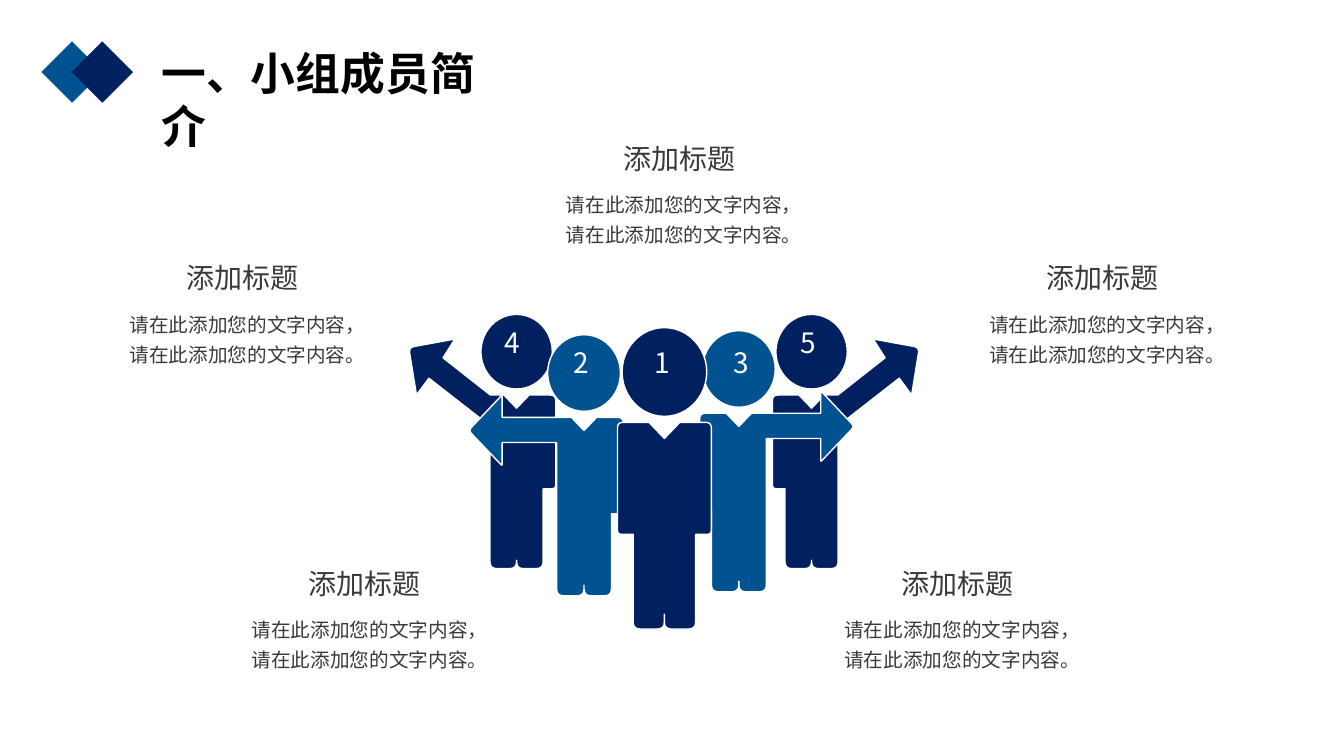
"""Build a team introduction slide with five numbered figures and captions."""
from dataclasses import dataclass

from lxml import etree
from pptx import Presentation
from pptx import util as u
from pptx.dml.color import RGBColor
from pptx.enum import shapes, text
from pptx.oxml.ns import qn


@dataclass(frozen=True)
class Theme:
    navy: str = "002060"
    blue: str = "005390"
    white: str = "FFFFFF"
    black: str = "000000"
    grey: str = "3B3838"
    title_font: str = "Arial"
    font: str = "Noto Sans CJK SC"
    title_size: int = 32
    head_size: int = 20
    body_size: int = 14


@dataclass(frozen=True)
class Build:
    head: tuple
    head_rise: float
    collar: tuple
    shoulder: float
    hem: float
    leg: float
    foot: float
    notch: float
    arm: tuple

    def outline(self):
        """Return (x, y, corner radius) points around the collar centre line."""
        return [
            (0, self.collar[1], 0), (-self.collar[0], 0, 0),
            (-self.shoulder, 0, 4), (-self.shoulder, self.hem, 3),
            (-self.leg, self.hem, 0), (-self.leg, self.foot, 5),
            (0, self.foot, 5), (0, self.notch, 0), (0, self.foot, 5),
            (self.leg, self.foot, 5), *self.arm, (self.collar[0], 0, 0),
        ]


OUTER = Build((51, 53.3), 57.6, (9, 9.4), 28, 67, 19, 124, 118, (
    (19, 22, 0), (62.6, -12, 0), (71.5, 0, 1.5), (77, -34, 4),
    (44, -40, 1), (52.5, -26.6, 0), (18.7, 0, 0)))
INNER = Build((52, 54.7), 59, (9, 9.4), 28, 69, 19.6, 127.5, 120, (
    (19.6, 18, 0), (58.5, 18, 0), (58.5, 34.6, 1), (82.5, 9.4, 3),
    (58.5, -16, 1), (58.5, 0, 0)))
CENTRE = Build((60.5, 63.4), 67.7, (11, 11.5), 33.5, 80, 22.3, 147.6, 137, (
    (22.3, 80, 0), (33.5, 80, 3), (33.5, 0, 4)))


def rounded(points):
    """Replace each corner that has a radius by a short curve of points."""
    result = []
    for i, (x, y, radius) in enumerate(points):
        if not radius:
            result.append((x, y))
            continue
        ends = []
        for nx, ny, _ in (points[i - 1], points[(i + 1) % len(points)]):
            length = ((nx - x) ** 2 + (ny - y) ** 2) ** 0.5
            k = min(radius / length, 1)
            ends.append((x + (nx - x) * k, y + (ny - y) * k))
        (ax, ay), (bx, by) = ends
        for t in (0, 0.25, 0.5, 0.75, 1):
            a, c, b = (1 - t) ** 2, 2 * t * (1 - t), t * t
            result.append((a * ax + c * x + b * bx, a * ay + c * y + b * by))
    return result


class TeamSlide:
    """Draw themed elements on one slide, with lengths in points."""

    def __init__(self, prs, theme):
        self.theme = theme
        self.s = prs.slides.add_slide(prs.slide_layouts[5])

    def paint(self, sp, color, outlined=True):
        """Apply a fill and an optional white outline."""
        sp.shadow.inherit = False
        sp.fill.solid()
        sp.fill.fore_color.rgb = RGBColor.from_string(color)
        if outlined:
            sp.line.color.rgb = RGBColor.from_string(self.theme.white)
            sp.line.width = u.Pt(1)
        else:
            sp.line.fill.background()

    def set_text(self, sp, lines, size, color, font=None, bold=False,
                 align=text.PP_ALIGN.LEFT, spacing=None, inset=True):
        """Fill a shape's text frame, one paragraph per line."""
        tf = sp.text_frame
        tf.word_wrap = True
        tf.auto_size = text.MSO_AUTO_SIZE.NONE
        tf.vertical_anchor = text.MSO_ANCHOR.TOP
        if not inset:
            tf.margin_left = tf.margin_right = tf.margin_top = tf.margin_bottom = 0
        tf.text = "\n".join(lines)
        for p in tf.paragraphs:
            p.alignment = align
            if spacing:
                p.line_spacing = spacing
            p.font.size = u.Pt(size)
            p.font.bold = bold
            p.font.color.rgb = RGBColor.from_string(color)
            p.font.name = font or self.theme.font
            props = p._p.pPr.find(qn("a:defRPr"))
            etree.SubElement(props, qn("a:ea"), typeface=self.theme.font)

    def title(self, x, y, w, h, words):
        """Place and format the title placeholder."""
        sp = self.s.shapes.title
        sp.left, sp.top, sp.width, sp.height = map(u.Pt, (x, y, w, h))
        self.set_text(sp, [words], self.theme.title_size, self.theme.black,
                      font=self.theme.title_font, bold=True)

    def textbox(self, x, y, w, h, lines, size, color, **style):
        """Add a text box."""
        sp = self.s.shapes.add_textbox(*map(u.Pt, (x, y, w, h)))
        self.set_text(sp, lines, size, color, **style)

    def shape(self, kind, x, y, w, h, color, outlined=True):
        """Add a preset shape."""
        sp = self.s.shapes.add_shape(kind, *map(u.Pt, (x, y, w, h)))
        self.paint(sp, color, outlined)
        return sp

    def square(self, x, y, size, color):
        """Add a square turned on its corner."""
        sp = self.shape(shapes.MSO_SHAPE.RECTANGLE, x, y, size, size, color, False)
        sp.rotation = 45

    def figure(self, build, cx, top, color, side=1):
        """Add a person whose arm points to the given side."""
        points = [(u.Pt(cx + side * x), u.Pt(top + y))
                  for x, y in rounded(build.outline())]
        builder = self.s.shapes.build_freeform(*points[0])
        builder.add_line_segments(points[1:], close=True)
        self.paint(builder.convert_to_shape(), color)
        w, h = build.head
        self.shape(shapes.MSO_SHAPE.OVAL, cx - w / 2, top - build.head_rise,
                   w, h, color)

    def number(self, x, y, digit):
        """Add a figure's number."""
        self.textbox(x, y, 15, 24.5, [digit], self.theme.head_size,
                     self.theme.white, inset=False)

    def caption(self, x, y):
        """Add a heading with two lines of text below it."""
        self.textbox(x, y, 105, 31.7, ["添加标题"], self.theme.head_size,
                     self.theme.grey, align=text.PP_ALIGN.CENTER)
        self.textbox(x - 35.5, y + 31.7, 190, 51,
                     ["请在此添加您的文字内容，", "请在此添加您的文字内容。"],
                     self.theme.body_size, self.theme.grey, spacing=1.3)


def main():
    theme = Theme()
    prs = Presentation()
    prs.slide_width, prs.slide_height = u.Pt(960), u.Pt(540)
    slide = TeamSlide(prs, theme)
    slide.square(36, 36, 31, theme.blue)
    slide.square(57.6, 36, 31, theme.navy)
    slide.title(108, 28.8, 270.7, 46, "一、小组成员简介")

    slide.figure(OUTER, 579.7, 282.2, theme.navy)
    slide.figure(OUTER, 369, 282.2, theme.navy, side=-1)
    slide.figure(INNER, 417.2, 298.1, theme.blue, side=-1)
    slide.figure(INNER, 527.8, 295.2, theme.blue)
    slide.figure(CENTRE, 474.6, 301.7, theme.navy)

    for digit, x, y in (("1", 467.3, 247), ("2", 409.7, 247), ("4", 360.7, 232.6),
                        ("5", 571.7, 232.6), ("3", 524.2, 247)):
        slide.number(x, y, digit)
    for x, y in ((432.7, 97.2), (735, 182.9), (121, 182.9),
                 (208.2, 401), (631.5, 401)):
        slide.caption(x, y)
    prs.save("out.pptx")


if __name__ == "__main__":
    main()
